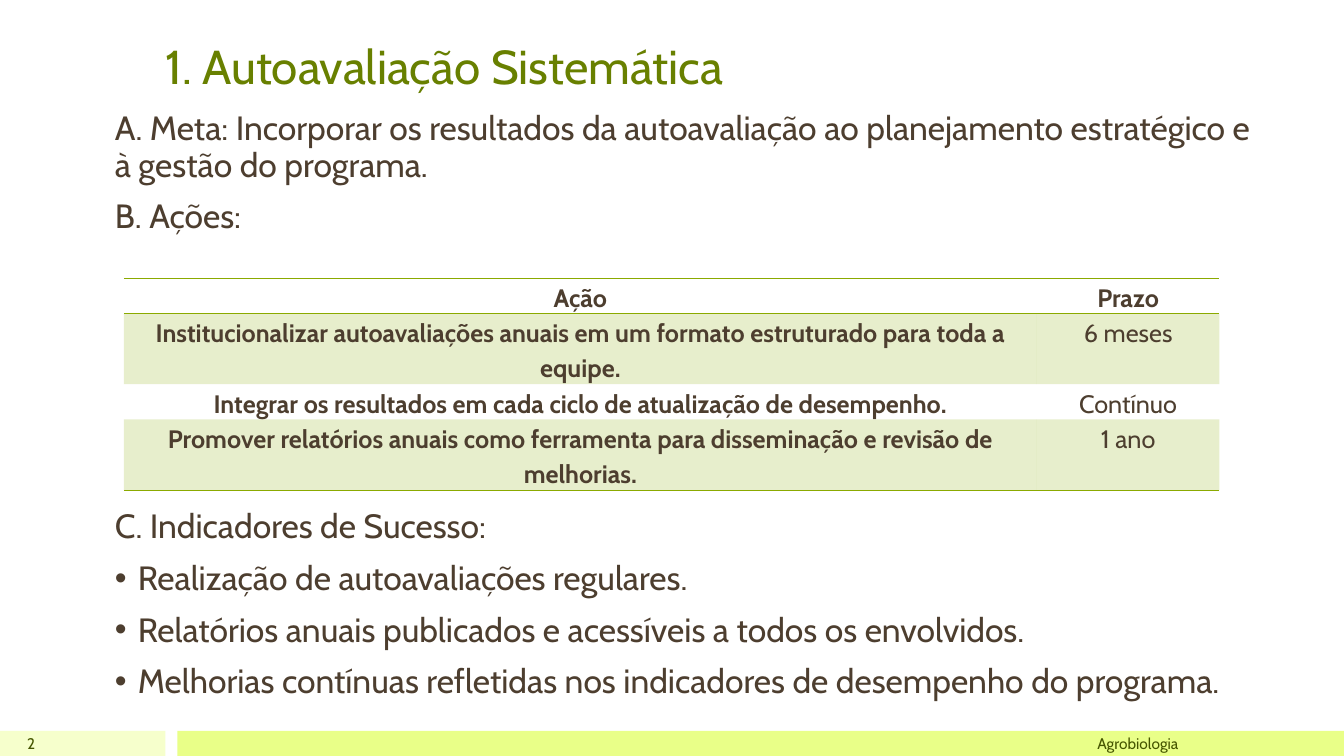
from lxml.etree import SubElement as Sub
from pptx import Presentation
from pptx.dml.color import RGBColor
from pptx.enum.shapes import MSO_SHAPE as Shape
from pptx.enum.text import MSO_ANCHOR as Anchor, MSO_AUTO_SIZE as Fit, PP_ALIGN as Align
from pptx.oxml.ns import qn
from pptx.util import Cm, Pt

FONT = "Cabin"
GREEN = RGBColor(0x68, 0x80, 0x00)
BROWN = RGBColor(0x4D, 0x3E, 0x2F)
OLIVE = RGBColor(0x45, 0x55, 0x00)
LEAF = RGBColor(0x8B, 0xAA, 0x00)
PALE = RGBColor(0xF6, 0xFF, 0xCC)
LIME = RGBColor(0xE9, 0xFF, 0x88)
NO_GRID = "{2D5ABB26-0587-4C30-8999-92F81FD0307C}"

BAR_TOP, BAR_H = 18.42, 0.63
HEAD = ["A. Meta: Incorporar os resultados da autoavaliação ao planejamento estratégico e "
        "à gestão do programa.",
        "B. Ações:"]
GOALS = "C. Indicadores de Sucesso:"
SIGNS = ["Realização de autoavaliações regulares.",
         "Relatórios anuais publicados e acessíveis a todos os envolvidos.",
         "Melhorias contínuas refletidas nos indicadores de desempenho do programa."]
ROWS = [("Ação", "Prazo"),
        ("Institucionalizar autoavaliações anuais em um formato estruturado para toda a equipe.",
         "6 meses"),
        ("Integrar os resultados em cada ciclo de atualização de desempenho.", "Contínuo"),
        ("Promover relatórios anuais como ferramenta para disseminação e revisão de melhorias.",
         "1 ano")]
COLS = (23.01, 4.6)
LINES = (1, 2, 1, 2)
LINE_H = 0.89


def apply(obj, form):
    for name, value in form.items():
        setattr(obj, name, value)


def place(shape, left, top, width, height):
    apply(shape, {"left": Cm(left), "top": Cm(top), "width": Cm(width), "height": Cm(height)})


def write(par, text, size, color, bold=False, **form):
    run = par.add_run()
    run.text = text
    apply(run.font, {"name": FONT, "size": Pt(size), "bold": bold})
    run.font.color.rgb = color
    apply(par, form)


def add_bar(slide, left, width, color):
    bar = slide.shapes.add_shape(Shape.RECTANGLE, Cm(left), Cm(BAR_TOP), Cm(width), Cm(BAR_H))
    bar.shadow.inherit = False
    bar.fill.solid()
    bar.fill.fore_color.rgb = color
    bar.line.fill.background()


def add_label(slide, text, left, width):
    box = slide.shapes.add_textbox(Cm(left), Cm(BAR_TOP), Cm(width), Cm(BAR_H))
    frame = box.text_frame
    apply(frame, {"word_wrap": True, "vertical_anchor": Anchor.MIDDLE})
    write(frame.paragraphs[0], text, 11, OLIVE, alignment=Align.RIGHT)


def set_title(slide, text):
    title = slide.shapes.title
    place(title, 3.91, 0.64, 26.04, 1.85)
    frame = title.text_frame
    apply(frame, {"auto_size": Fit.NONE, "vertical_anchor": Anchor.BOTTOM})
    write(frame.paragraphs[0], text, 34, GREEN, alignment=Align.LEFT)


def set_mark(par, mark):
    """Give the paragraph a hanging bullet, or none."""
    props = par._p.get_or_add_pPr()
    hang = Cm(0.58) if mark else 0
    props.set("marL", str(hang))
    props.set("indent", str(-hang))
    if mark:
        Sub(props, qn("a:buChar"), char=mark)
    else:
        Sub(props, qn("a:buNone"))


def fill_body(slide):
    body = slide.placeholders[1]
    place(body, 2.64, 2.69, 29.24, 13.64)
    frame = body.text_frame
    frame.auto_size = Fit.NONE
    for i, text in enumerate(HEAD + [GOALS] + SIGNS):
        par = frame.paragraphs[0] if i == 0 else frame.add_paragraph()
        gap = 195.5 if text == GOALS else 11  # room for the table
        write(par, text, 24, BROWN, line_spacing=0.9, space_before=Pt(gap))
        set_mark(par, "•" if text in SIGNS else None)


def add_edge(cell, tag):
    line = Sub(cell._tc.get_or_add_tcPr(), qn(tag), w=str(Pt(1)))
    Sub(Sub(line, qn("a:solidFill")), qn("a:srgbClr"), val=str(LEAF))


def paint(cell, shaded):
    if not shaded:
        cell.fill.background()
        return
    cell.fill.solid()
    cell.fill.fore_color.rgb = LEAF
    color = cell._tc.tcPr.find(".//" + qn("a:solidFill") + "/" + qn("a:srgbClr")
                               if cell._tc.tcPr.find(qn("a:lnB")) is None
                               else qn("a:solidFill") + "/" + qn("a:srgbClr"))
    Sub(color, qn("a:alpha"), val="20000")


def add_plan(slide):
    frame = slide.shapes.add_table(len(ROWS), len(COLS), Cm(3.12), Cm(7.01),
                                   Cm(sum(COLS)), Cm(LINE_H * sum(LINES)))
    table = frame.table
    apply(table, {"first_row": False, "horz_banding": False})
    table._tbl.tblPr.find(qn("a:tableStyleId")).text = NO_GRID
    for col, width in zip(table.columns, COLS):
        col.width = Cm(width)
    for r, (row, count) in enumerate(zip(table.rows, LINES)):
        row.height = Cm(LINE_H * count)
        for c, cell in enumerate(row.cells):
            apply(cell, {"margin_left": Cm(0.18), "margin_right": Cm(0.18),
                         "margin_top": 0, "margin_bottom": 0})
            write(cell.text_frame.paragraphs[0], ROWS[r][c], 18, BROWN, r == 0 or c == 0,
                  alignment=Align.CENTER, line_spacing=1.15, space_after=Pt(10))
            if r == 0:
                add_edge(cell, "a:lnT")
            if r in (0, len(ROWS) - 1):
                add_edge(cell, "a:lnB")
            paint(cell, r % 2 == 1)


def main():
    deck = Presentation()
    apply(deck, {"slide_width": Cm(33.87), "slide_height": Cm(19.05)})
    slide = deck.slides.add_slide(deck.slide_layouts[1])
    add_bar(slide, 0, 4.17, PALE)
    add_bar(slide, 4.47, 29.4, LIME)
    set_title(slide, "1. Autoavaliação Sistemática")
    fill_body(slide)
    add_label(slide, "2", 0, 1.14)
    add_label(slide, "Agrobiologia", 4.55, 25.4)
    add_plan(slide)
    deck.save("out.pptx")


if __name__ == "__main__":
    main()
